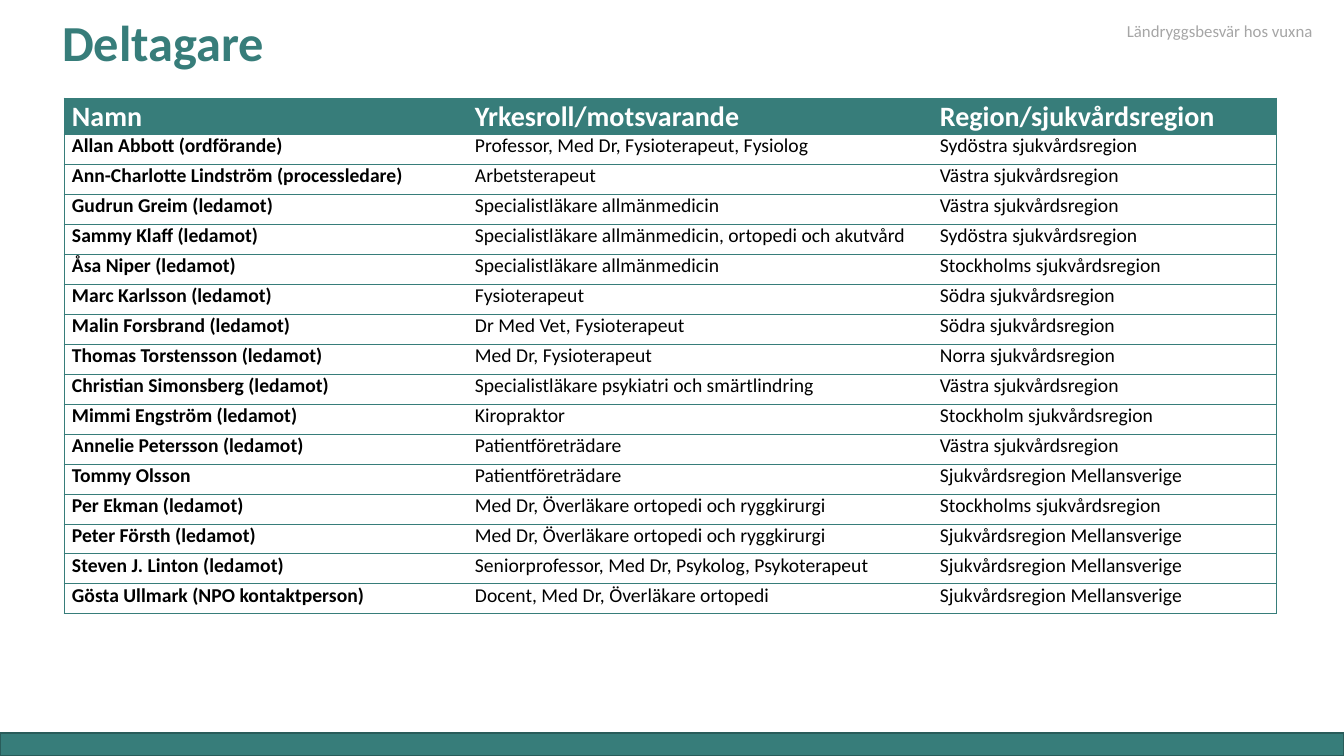
import pptx
import pptx.dml.color
import pptx.enum.shapes
import pptx.enum.text
import pptx.oxml
import pptx.oxml.ns
import pptx.util

EMU_PER_PX = 914400 / 100.8
FONT = "Calibri"
COLOURS = {
    "teal": "377D7A",
    "dark teal": "295C5A",
    "white": "FFFFFF",
    "black": "000000",
    "grey": "A6A6A6",
}
COLUMN_WIDTHS = [403, 465, 344]
HEADER_HEIGHT = 36
ROW_HEIGHT = 30
PARTICIPANTS = [
    ("Namn", "Yrkesroll/motsvarande", "Region/sjukvårdsregion"),
    ("Allan Abbott (ordförande)", "Professor, Med Dr, Fysioterapeut, Fysiolog", "Sydöstra sjukvårdsregion"),
    ("Ann-Charlotte Lindström (processledare)", "Arbetsterapeut", "Västra sjukvårdsregion"),
    ("Gudrun Greim (ledamot)", "Specialistläkare allmänmedicin", "Västra sjukvårdsregion"),
    ("Sammy Klaff (ledamot)", "Specialistläkare allmänmedicin, ortopedi och akutvård", "Sydöstra sjukvårdsregion"),
    ("Åsa Niper (ledamot)", "Specialistläkare allmänmedicin", "Stockholms sjukvårdsregion"),
    ("Marc Karlsson (ledamot)", "Fysioterapeut", "Södra sjukvårdsregion"),
    ("Malin Forsbrand (ledamot)", "Dr Med Vet, Fysioterapeut", "Södra sjukvårdsregion"),
    ("Thomas Torstensson (ledamot)", "Med Dr, Fysioterapeut", "Norra sjukvårdsregion"),
    ("Christian Simonsberg (ledamot)", "Specialistläkare psykiatri och smärtlindring", "Västra sjukvårdsregion"),
    ("Mimmi Engström (ledamot)", "Kiropraktor", "Stockholm sjukvårdsregion"),
    ("Annelie Petersson (ledamot)", "Patientföreträdare", "Västra sjukvårdsregion"),
    ("Tommy Olsson", "Patientföreträdare", "Sjukvårdsregion Mellansverige"),
    ("Per Ekman (ledamot)", "Med Dr, Överläkare ortopedi och ryggkirurgi", "Stockholms sjukvårdsregion"),
    ("Peter Försth (ledamot)", "Med Dr, Överläkare ortopedi och ryggkirurgi", "Sjukvårdsregion Mellansverige"),
    ("Steven J. Linton (ledamot)", "Seniorprofessor, Med Dr, Psykolog, Psykoterapeut", "Sjukvårdsregion Mellansverige"),
    ("Gösta Ullmark (NPO kontaktperson)", "Docent, Med Dr, Överläkare ortopedi", "Sjukvårdsregion Mellansverige"),
]


def px(length):
    return pptx.util.Emu(round(length * EMU_PER_PX))


def colour(name):
    return pptx.dml.color.RGBColor.from_string(COLOURS[name])


def format_paragraph(paragraph, size, colour_name, bold=False, line_spacing=None):
    paragraph.alignment = pptx.enum.text.PP_ALIGN.LEFT
    paragraph.line_spacing = line_spacing
    paragraph.font.name = FONT
    paragraph.font.size = pptx.util.Pt(size)
    paragraph.font.bold = bold
    paragraph.font.color.rgb = colour(colour_name)


def add_title(slide, text):
    title = slide.shapes.title
    title.left, title.top, title.width, title.height = px(52), px(4), px(1159), px(82)
    frame = title.text_frame
    frame.text = text
    frame.auto_size = pptx.enum.text.MSO_AUTO_SIZE.NONE
    frame.vertical_anchor = pptx.enum.text.MSO_ANCHOR.MIDDLE
    format_paragraph(frame.paragraphs[0], 36, "teal", bold=True, line_spacing=0.9)


def add_text(slide, box, text, size, colour_name):
    frame = slide.shapes.add_textbox(*map(px, box)).text_frame
    frame.word_wrap = True
    frame.text = text
    format_paragraph(frame.paragraphs[0], size, colour_name)


def add_bar(slide, box):
    bar = slide.shapes.add_shape(pptx.enum.shapes.MSO_SHAPE.RECTANGLE, *map(px, box))
    bar.shadow.inherit = False
    bar.fill.solid()
    bar.fill.fore_color.rgb = colour("teal")
    bar.line.color.rgb = colour("dark teal")
    bar.line.width = pptx.util.Pt(1)


def set_borders(cell, visible_sides):
    properties = cell._tc.get_or_add_tcPr()
    for side in "LRTB":
        if side in visible_sides:
            fill = f'<a:solidFill><a:srgbClr val="{COLOURS["teal"]}"/></a:solidFill>'
        else:
            fill = "<a:noFill/>"
        properties.append(pptx.oxml.parse_xml(
            f'<a:ln{side} {pptx.oxml.ns.nsdecls("a")} w="6350">{fill}</a:ln{side}>'
        ))


def fill_cell(cell, text, is_header, is_first, is_last):
    cell.margin_left = cell.margin_right = px(8)
    cell.margin_top = cell.margin_bottom = 0
    cell.text = text
    paragraph = cell.text_frame.paragraphs[0]
    set_borders(cell, "TB" + "L" * is_first + "R" * is_last)
    if is_header:
        cell.fill.solid()
        cell.fill.fore_color.rgb = colour("teal")
        format_paragraph(paragraph, 20, "white", bold=True, line_spacing=1.06)
    else:
        cell.fill.background()
        format_paragraph(paragraph, 14, "black", bold=is_first)


def add_participant_table(slide, left, top):
    row_count, column_count = len(PARTICIPANTS), len(COLUMN_WIDTHS)
    height = HEADER_HEIGHT + ROW_HEIGHT * (row_count - 1)
    table = slide.shapes.add_table(
        row_count, column_count, px(left), px(top), px(sum(COLUMN_WIDTHS)), px(height)
    ).table
    table.horz_banding = False
    for column, width in zip(table.columns, COLUMN_WIDTHS):
        column.width = px(width)
    for row_index, texts in enumerate(PARTICIPANTS):
        table.rows[row_index].height = px(ROW_HEIGHT if row_index else HEADER_HEIGHT)
        for column_index, text in enumerate(texts):
            fill_cell(
                table.cell(row_index, column_index), text,
                is_header=row_index == 0,
                is_first=column_index == 0,
                is_last=column_index == column_count - 1,
            )


def main():
    presentation = pptx.Presentation()
    presentation.slide_width, presentation.slide_height = px(1344), px(756)
    slide = presentation.slides.add_slide(presentation.slide_layouts[5])
    add_bar(slide, (0, 733, 1344, 23))
    add_title(slide, "Deltagare")
    add_participant_table(slide, 64, 98)
    add_text(slide, (1117, 16, 208, 30), "Ländryggsbesvär hos vuxna", 12, "grey")
    presentation.save("out.pptx")


if __name__ == "__main__":
    main()
